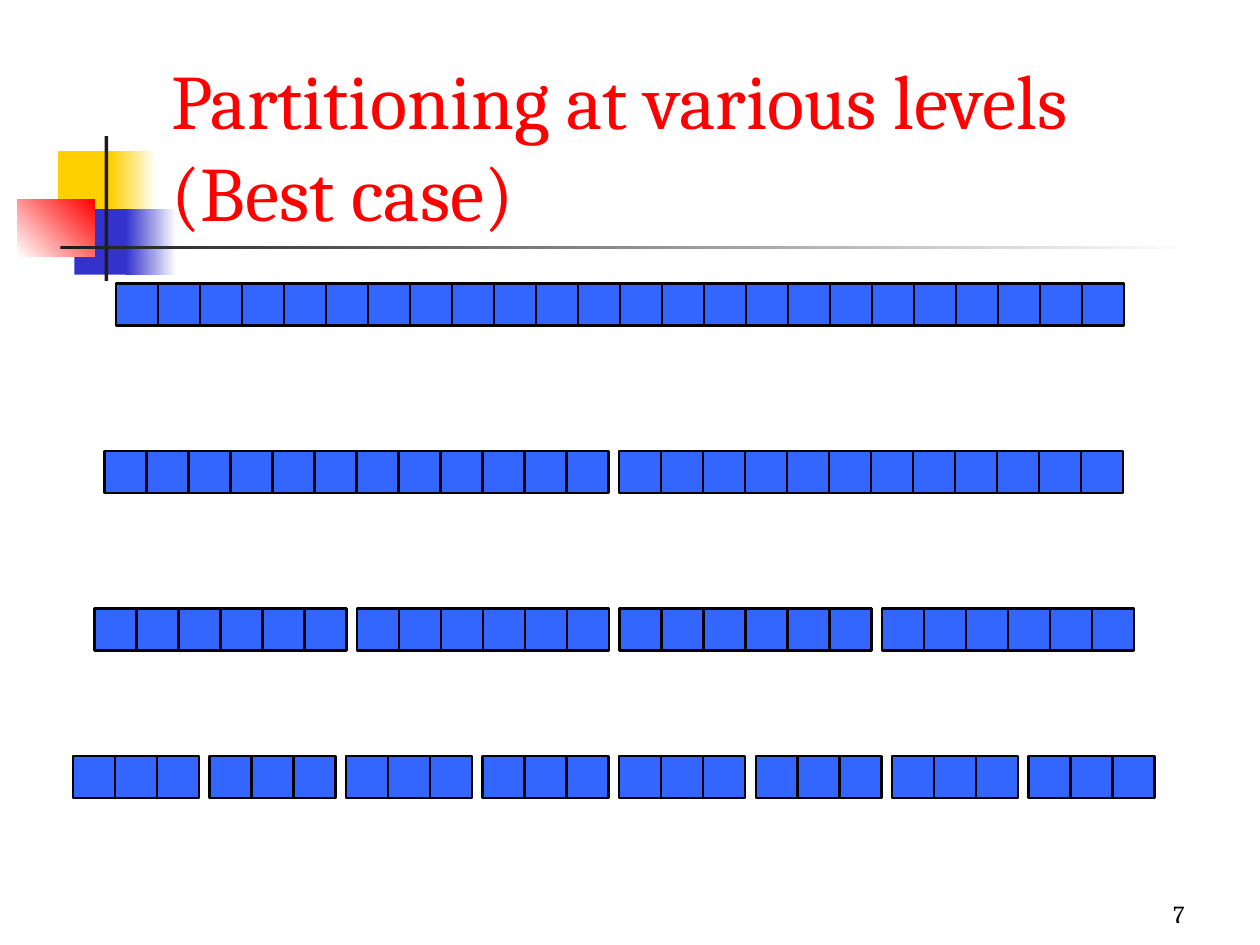
from pptx import Presentation
from pptx.dml.color import RGBColor
from pptx.enum.shapes import MSO_SHAPE
from pptx.enum.text import MSO_ANCHOR, MSO_AUTO_SIZE, PP_ALIGN
from pptx.util import Inches, Pt

WHITE = RGBColor(0xFF, 0xFF, 0xFF)
BLACK = RGBColor(0x00, 0x00, 0x00)
CHARCOAL = RGBColor(0x1C, 0x1C, 0x1C)
YELLOW = RGBColor(0xFF, 0xCF, 0x01)
NAVY = RGBColor(0x33, 0x33, 0xCC)
RED = RGBColor(0xFF, 0x00, 0x00)
CELL_BLUE = RGBColor(0x33, 0x66, 0xFF)

CELL_COUNT = 24
CELL_SIZE = 1 / 3
PARTITION_GAP = 1 / 12

DECORATIONS = [
    ((0.46, 1.2, 0.48, 0.52), [YELLOW], 0),
    ((0.88, 1.2, 0.36, 0.52), [YELLOW, WHITE], 0),
    ((0.59, 1.66, 0.46, 0.52), [NAVY], 0),
    ((1, 1.66, 0.4, 0.52), [NAVY, WHITE], 0),
    ((0.14, 1.58, 0.61, 0.46), [WHITE, RED], 45),
    ((0.83, 1.08, 0.03, 1.15), [CHARCOAL], 0),
    ((0.48, 1.95, 9, 0.03), [CHARCOAL, WHITE], 0),
]

LEVELS = [
    (1, 0.92, 2.25),
    (2, 0.83, 3.58),
    (4, 0.75, 4.83),
    (8, 0.58, 6),
]


class SlideBuilder:
    font_name = "Cambria"

    def __init__(self, presentation):
        self.slide = presentation.slides.add_slide(presentation.slide_layouts[5])
        self.shapes = self.slide.shapes

    def format_text(self, shape, text, size, color, alignment):
        frame = shape.text_frame
        frame_format = {
            "word_wrap": True,
            "auto_size": MSO_AUTO_SIZE.NONE,
            "vertical_anchor": MSO_ANCHOR.BOTTOM,
        }
        for name, value in frame_format.items():
            setattr(frame, name, value)
        paragraph = frame.paragraphs[0]
        paragraph.text = text
        paragraph.alignment = alignment
        for run in paragraph.runs:
            for name, value in {"name": self.font_name, "size": Pt(size)}.items():
                setattr(run.font, name, value)
            run.font.color.rgb = color

    def title(self, box, text):
        title = self.shapes.title
        for name, value in zip(("left", "top", "width", "height"), box):
            setattr(title, name, Inches(value))
        self.format_text(title, text, 44, RED, PP_ALIGN.LEFT)
        self.shapes.element.append(title.element)

    def page_number(self, box, text):
        text_box = self.shapes.add_textbox(*map(Inches, box))
        self.format_text(text_box, text, 14, BLACK, PP_ALIGN.RIGHT)

    def rectangle(self, shapes, box):
        shape = shapes.add_shape(MSO_SHAPE.RECTANGLE, *map(Inches, box))
        shape.shadow.inherit = False
        return shape

    def decoration(self, box, colors, angle):
        shape = self.rectangle(self.shapes, box)
        shape.line.fill.background()
        if len(colors) == 1:
            shape.fill.solid()
            shape.fill.fore_color.rgb = colors[0]
            return
        shape.fill.gradient()
        shape.fill.gradient_angle = angle
        for position, (stop, color) in enumerate(zip(shape.fill.gradient_stops, colors)):
            stop.position = position
            stop.color.rgb = color

    def level(self, partitions, left, top):
        group = self.shapes.add_group_shape()
        cells_per_partition = CELL_COUNT // partitions
        for index in range(CELL_COUNT):
            gaps = index // cells_per_partition
            cell_left = left + index * CELL_SIZE + gaps * PARTITION_GAP
            cell = self.rectangle(group.shapes, (cell_left, top, CELL_SIZE, CELL_SIZE))
            cell.fill.solid()
            cell.fill.fore_color.rgb = CELL_BLUE
            cell.line.color.rgb = BLACK
            cell.line.width = Pt(1.25)


def main():
    presentation = Presentation()
    presentation.slide_width = Inches(10)
    presentation.slide_height = Inches(7.5)
    builder = SlideBuilder(presentation)
    for box, colors, angle in DECORATIONS:
        builder.decoration(box, colors, angle)
    builder.page_number((7.42, 6.92, 2.08, 0.5), "7")
    builder.title((1.26, 0.68, 8.52, 1.25), "Partitioning at various levels\v(Best case)")
    for partitions, left, top in LEVELS:
        builder.level(partitions, left, top)
    presentation.save("out.pptx")


if __name__ == "__main__":
    main()
